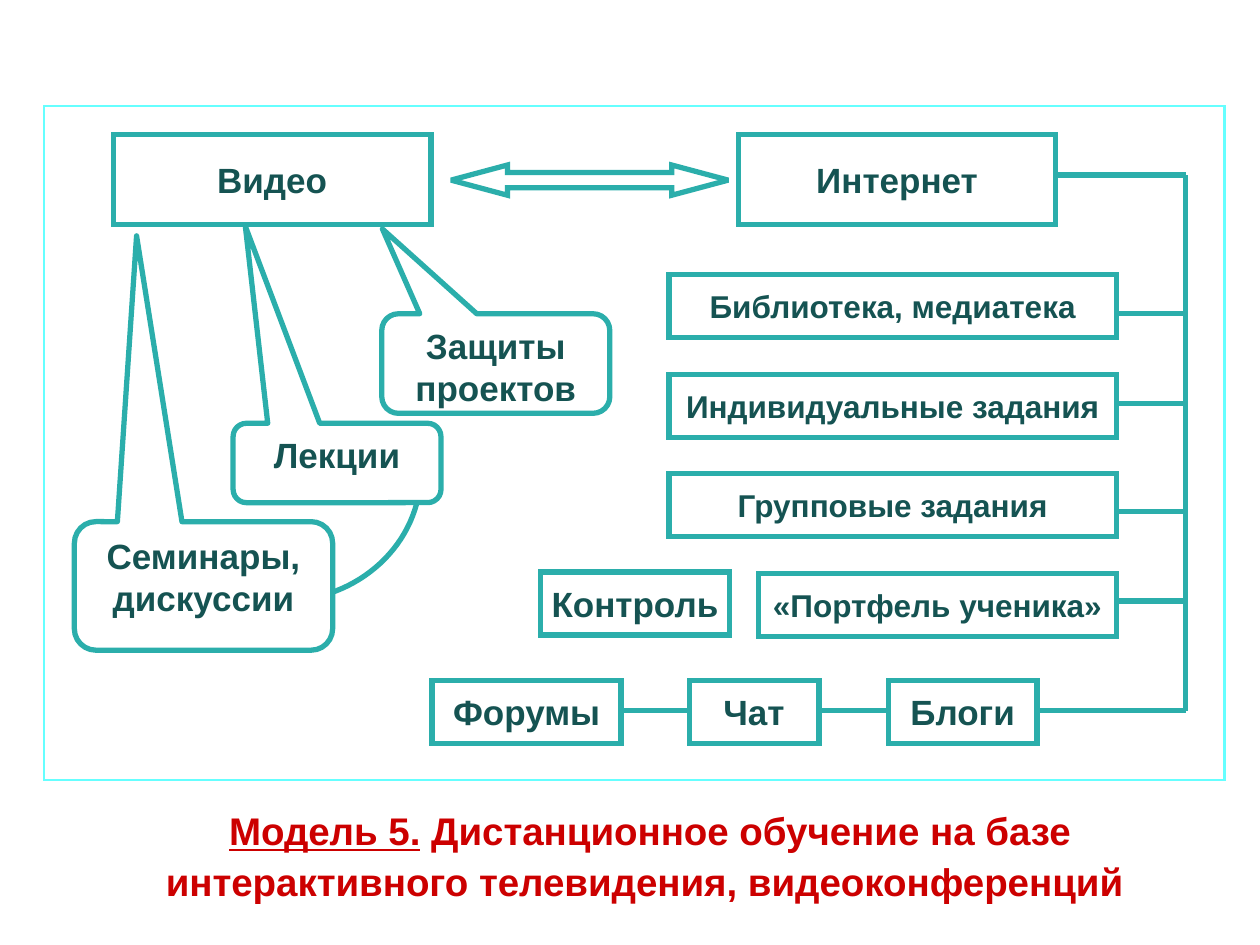
from math import cos, pi, sin

from lxml import etree
from pptx import Presentation
from pptx.dml.color import RGBColor
from pptx.enum.shapes import MSO_CONNECTOR, MSO_SHAPE
from pptx.enum.text import MSO_ANCHOR, MSO_AUTO_SIZE, PP_ALIGN
from pptx.oxml.ns import qn
from pptx.util import Inches, Pt

RECTANGLE = MSO_SHAPE.RECTANGLE
CALLOUT = MSO_SHAPE.ROUNDED_RECTANGULAR_CALLOUT
DOUBLE_ARROW = MSO_SHAPE.LEFT_RIGHT_ARROW
STRAIGHT = MSO_CONNECTOR.STRAIGHT
TOP, MIDDLE = MSO_ANCHOR.TOP, MSO_ANCHOR.MIDDLE
CENTER = PP_ALIGN.CENTER
GROW = MSO_AUTO_SIZE.SHAPE_TO_FIT_TEXT

TEAL = RGBColor(0x2B, 0xAE, 0xAB)
DARK_TEAL = RGBColor(0x15, 0x53, 0x52)
CYAN = RGBColor(0x66, 0xFF, 0xFF)
RED = RGBColor(0xCC, 0x00, 0x00)
WHITE = RGBColor(0xFF, 0xFF, 0xFF)


class Diagram:
    """Draws the elements of a teal block diagram on one slide."""

    def __init__(self, slide):
        self.shapes = slide.shapes
        self.label_format = {"name": "Arial", "bold": True}

    def add_span(self, para, text, size, color, **extra):
        span = para.add_run()
        span.text = text
        for name, value in {**self.label_format, "size": Pt(size), **extra}.items():
            setattr(span.font, name, value)
        span.font.color.rgb = color

    def outline(self, shape, fill=None, color=TEAL, width=3):
        shape.shadow.inherit = False
        if fill is None:
            shape.fill.background()
        else:
            shape.fill.solid()
            shape.fill.fore_color.rgb = fill
        shape.line.color.rgb = color
        shape.line.width = Pt(width)

    def shape(self, kind, area, fill=None, **line):
        shape = self.shapes.add_shape(kind, *map(Inches, area))
        self.outline(shape, fill, **line)
        if kind != CALLOUT:
            border = shape._element.spPr.find(qn("a:ln"))
            etree.SubElement(border, qn("a:miter"), lim="800000")
        return shape

    def label(self, shape, text, size, anchor, wrap):
        frame = shape.text_frame
        frame.vertical_anchor = anchor
        frame.word_wrap = wrap
        para = frame.paragraphs[0]
        para.alignment = CENTER
        self.add_span(para, text, size, DARK_TEAL)

    def box(self, text, area, size=20, fill=None):
        self.label(self.shape(RECTANGLE, area, fill), text, size, MIDDLE, False)

    def callout(self, text, area, tip):
        shape = self.shape(CALLOUT, area, WHITE)
        for index, value in enumerate((*tip, 0.167)):
            shape.adjustments[index] = value
        self.label(shape, text, 20, TOP, True)

    def arrow(self, area):
        shape = self.shape(DOUBLE_ARROW, area, WHITE)
        shape.adjustments[0] = 0.5
        shape.adjustments[1] = 1.868

    def line(self, left, top, right, bottom):
        line = self.shapes.add_connector(STRAIGHT, *map(Inches, (left, top, right, bottom)))
        line.line.color.rgb = TEAL
        line.line.width = Pt(3)
        etree.SubElement(line._element.spPr, qn("a:effectLst"))

    def quarter_arc(self, left, top, width, height, steps=32):
        angles = [pi / 2 * step / steps for step in range(steps + 1)]
        points = [
            (Inches(left + width * sin(angle)), Inches(top + height * cos(angle)))
            for angle in angles
        ]
        builder = self.shapes.build_freeform(*points[0])
        builder.add_line_segments(points[1:], close=False)
        self.outline(builder.convert_to_shape())

    def caption(self, area, heading, text):
        frame = self.shapes.add_textbox(*map(Inches, area)).text_frame
        settings = {"word_wrap": True, "vertical_anchor": MIDDLE, "auto_size": GROW}
        for name, value in settings.items():
            setattr(frame, name, value)
        para = frame.paragraphs[0]
        para.alignment = CENTER
        para.line_spacing = 1.1
        self.add_span(para, heading, 22, RED, underline=True)
        self.add_span(para, text, 22, RED)


def main():
    deck = Presentation()
    deck.slide_width, deck.slide_height = Inches(10), Inches(7.5)
    diagram = Diagram(deck.slides.add_slide(deck.slide_layouts[6]))

    diagram.quarter_arc(2.24, 3.75, 1.1, 1.02)

    tasks_right, trunk, row_height = 8.86, 9.41, 0.5
    tasks = [
        ("Библиотека, медиатека", 3.55, 2.49),
        ("Индивидуальные задания", 3.55, 3.2),
        ("Групповые задания", 3.55, 4.06),
        ("«Портфель ученика»", 2.84, 4.77),
    ]
    for row, (text, width, branch) in enumerate(tasks):
        top = 2.18 + 0.79 * row
        diagram.box(text, (tasks_right - width, top, width, row_height), 18)
        diagram.line(tasks_right, branch, trunk, branch)
    diagram.box("Контроль", (4.29, 4.54, 1.5, row_height))

    talks = [("Форумы", 3.43, 1.5), ("Чат", 5.47, 1.03), ("Блоги", 7.05, 1.18)]
    next_lefts = [left for _, left, _ in talks[1:]] + [trunk]
    for (text, left, width), next_left in zip(talks, next_lefts):
        diagram.box(text, (left, 5.4, width, row_height))
        diagram.line(left + width, 5.64, next_left, 5.64)

    diagram.line(trunk, 1.39, trunk, 5.64)
    diagram.line(trunk, 1.39, 7.84, 1.39)

    diagram.box("Интернет", (5.86, 1.07, 2.52, 0.71), fill=WHITE)
    diagram.callout("Семинары, дискуссии", (0.59, 4.14, 2.05, 1.02), (-0.259, -2.724))
    diagram.callout("Лекции", (1.85, 3.36, 1.65, 0.63), (-0.441, -2.982))
    diagram.box("Видео", (0.9, 1.07, 2.52, 0.71), fill=WHITE)
    diagram.callout("Защиты проектов", (3.03, 2.49, 1.81, 0.79), (-0.497, -1.352))
    diagram.arrow((3.58, 1.31, 2.2, 0.24))

    diagram.caption(
        (0.98, 6.31, 8.36, 0.92),
        "Модель 5.",
        " Дистанционное обучение на базе интерактивного телевидения, видеоконференций ",
    )
    diagram.shape(RECTANGLE, (0.35, 0.84, 9.37, 5.35), color=CYAN, width=1.5)
    deck.save("out.pptx")


if __name__ == "__main__":
    main()
